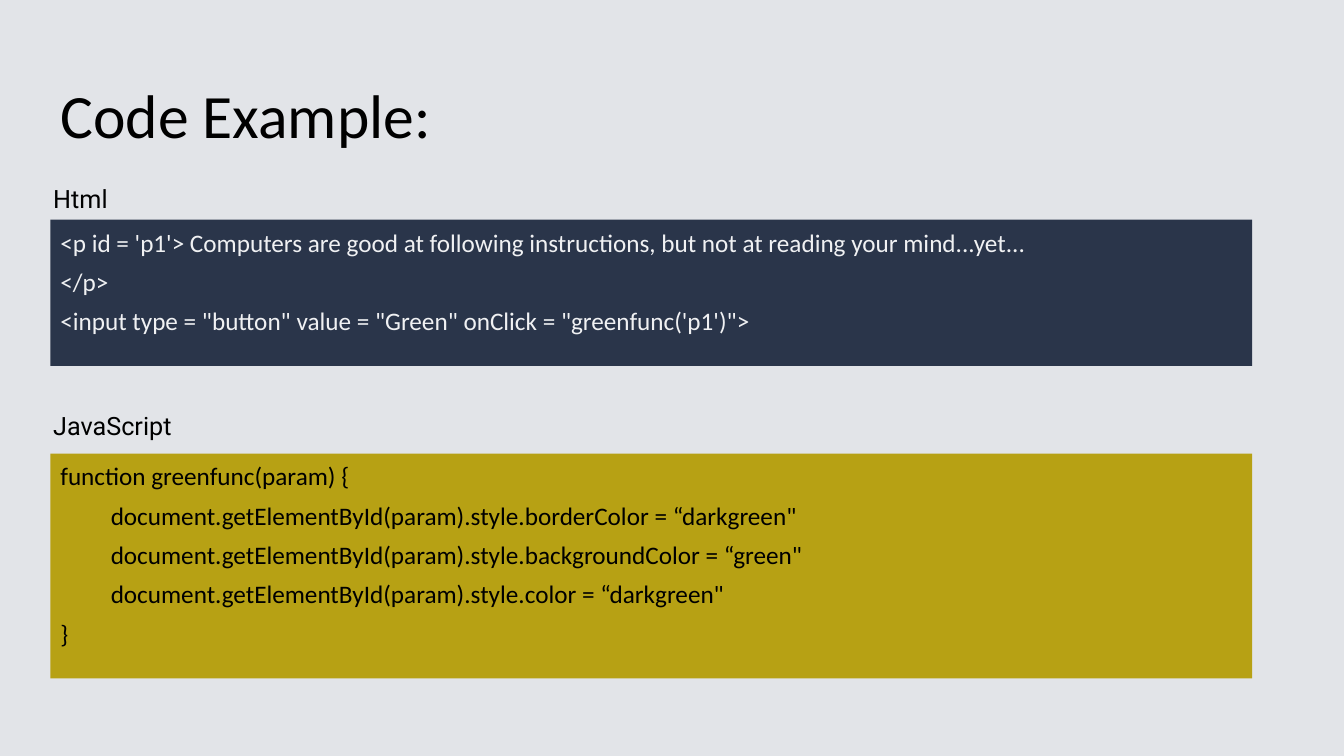
import pptx
import pptx.dml.color
import pptx.enum.shapes
import pptx.enum.text
import pptx.oxml
import pptx.oxml.ns
import pptx.util

Inches, Pt = pptx.util.Inches, pptx.util.Pt
ANCHOR = pptx.enum.text.MSO_ANCHOR
LEFT_ALIGN = pptx.enum.text.PP_ALIGN.LEFT

SLIDE_W, SLIDE_H = 13.33, 7.5
MARGIN, CONTENT_W = 0.5, 11.92
LABEL_W, LABEL_H, LABEL_OUTDENT = 2.43, 0.4, 0.07
BLACK = "000000"

HTML_CODE = [
    "<p id = 'p1'> Computers are good at following instructions, but not at reading your mind...yet...",
    "</p>",
    "<input type = \"button\" value = \"Green\" onClick = \"greenfunc('p1')\">",
]
JAVASCRIPT_CODE = [
    "function greenfunc(param) {",
    "\tdocument.getElementById(param).style.borderColor = “darkgreen\"",
    "\tdocument.getElementById(param).style.backgroundColor = “green\"",
    "\tdocument.getElementById(param).style.color = “darkgreen\"",
    "}",
]


def paint(target, color):
    """Give a fill a solid colour."""
    target.solid()
    target.fore_color.rgb = pptx.dml.color.RGBColor.from_string(color)


def add_run(paragraph, text, size, font, color):
    paragraph.alignment = LEFT_ALIGN
    run = paragraph.add_run()
    run.text = text
    run.font.size = Pt(size)
    run.font.name = font
    paint(run.font.fill, color)


def set_code_tab(paragraph, position):
    """Indent tabbed code lines by a fixed distance."""
    tabs = pptx.oxml.parse_xml(
        f'<a:tabLst {pptx.oxml.ns.nsdecls("a")}>'
        f'<a:tab pos="{Inches(position)}" algn="l"/></a:tabLst>')
    paragraph._p.get_or_add_pPr().append(tabs)


def place_title(slide, left, top, width, height):
    title = slide.shapes.title
    title.left, title.top = Inches(left), Inches(top)
    title.width, title.height = Inches(width), Inches(height)
    title.text_frame.vertical_anchor = ANCHOR.MIDDLE
    add_run(title.text_frame.paragraphs[0], "Code Example:", 44, "Calibri", BLACK)


def add_label(slide, left, top, text):
    label = slide.shapes.add_textbox(
        Inches(left), Inches(top), Inches(LABEL_W), Inches(LABEL_H))
    label.text_frame.word_wrap = True
    add_run(label.text_frame.paragraphs[0], text, 18, "Roboto", BLACK)


def add_code_panel(slide, left, top, width, height, lines, fill, color):
    panel = slide.shapes.add_shape(
        pptx.enum.shapes.MSO_SHAPE.RECTANGLE,
        Inches(left), Inches(top), Inches(width), Inches(height))
    panel.shadow.inherit = False
    paint(panel.fill, fill)
    panel.line.fill.background()
    frame = panel.text_frame
    frame.word_wrap = True
    frame.vertical_anchor = ANCHOR.TOP
    for index, line in enumerate(lines):
        paragraph = frame.add_paragraph() if index else frame.paragraphs[0]
        paragraph.line_spacing = 1.07
        paragraph.space_after = Pt(5)
        if line.startswith("\t"):
            set_code_tab(paragraph, 0.5)
        add_run(paragraph, line, 18, "Calibri", color)


def add_code_section(slide, left, top, width, height, name, gap, lines, fill, color):
    """Place a language label and, below a gap, its code panel."""
    add_label(slide, left - LABEL_OUTDENT, top, name)
    header = LABEL_H + gap
    add_code_panel(slide, left, top + header, width, height - header, lines, fill, color)


def main():
    deck = pptx.Presentation()
    deck.slide_width, deck.slide_height = Inches(SLIDE_W), Inches(SLIDE_H)
    slide = deck.slides.add_slide(deck.slide_layouts[5])
    paint(slide.background.fill, "E2E4E8")

    place_title(slide, MARGIN, 0.4, CONTENT_W, 1.45)
    add_code_section(slide, MARGIN, 1.77, CONTENT_W, 1.86,
                     "Html", 0.01, HTML_CODE, "2A354A", "F0F1F3")
    add_code_section(slide, MARGIN, 4.02, CONTENT_W, 2.71,
                     "JavaScript", 0.08, JAVASCRIPT_CODE, "B7A114", BLACK)
    deck.save("out.pptx")


if __name__ == "__main__":
    main()
